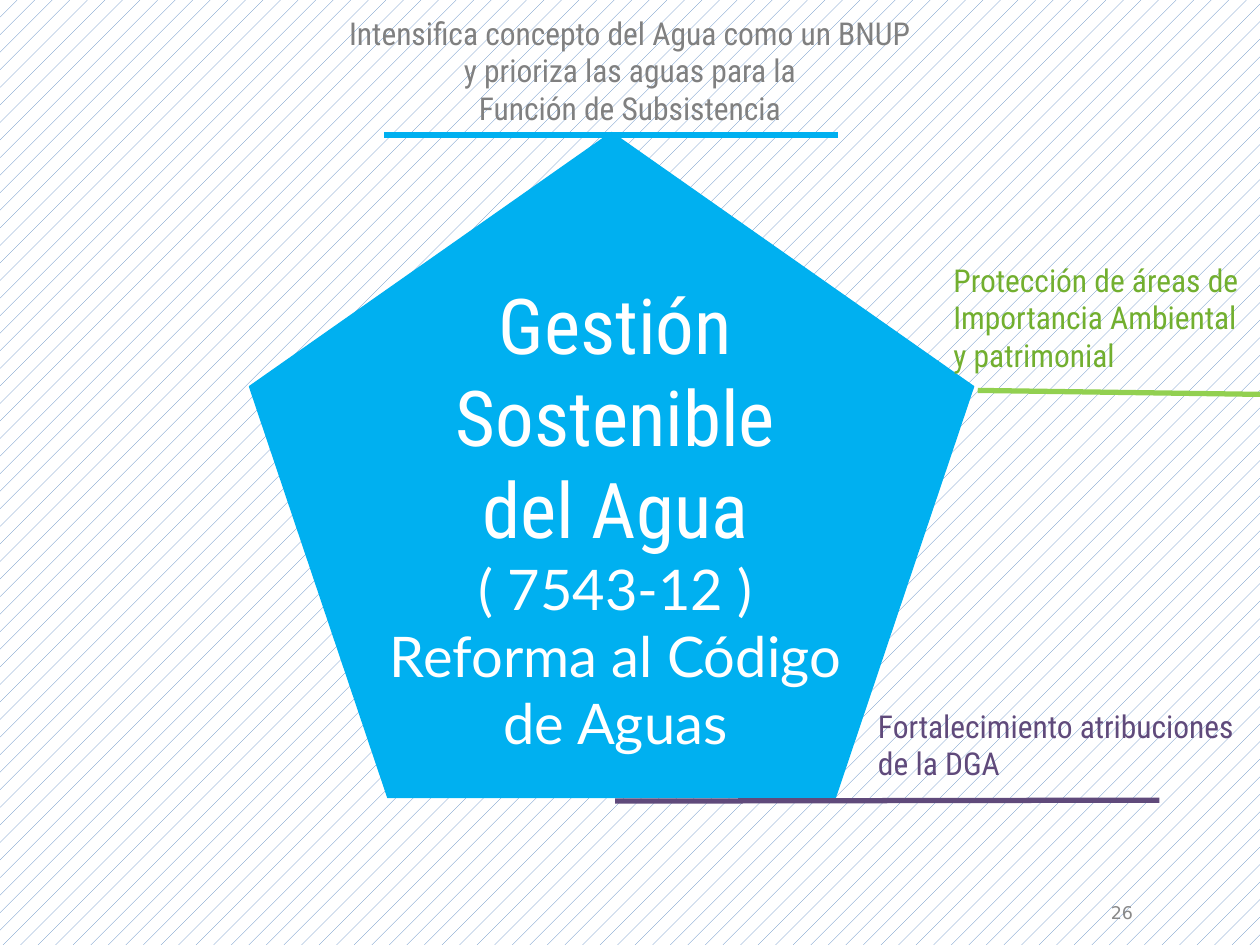
from dataclasses import dataclass

import pptx
import pptx.dml.color
import pptx.enum.dml
import pptx.enum.shapes
import pptx.enum.text
import pptx.oxml.ns
import pptx.util
from lxml import etree
from pptx.util import Cm

ALIGN = pptx.enum.text.PP_ALIGN
ANCHOR = pptx.enum.text.MSO_ANCHOR


@dataclass(frozen=True)
class Theme:
    water: str = "00B0F0"
    pattern: str = "4F81BD"
    white: str = "FFFFFF"
    gray: str = "808080"
    number: str = "898989"
    green: str = "72AF2F"
    green_line: str = "92D050"
    purple: str = "604A7B"
    heading_font: str = "Roboto Condensed"
    detail_font: str = "Lato"
    number_font: str = "DejaVu Sans"
    heading_size: int = 44
    detail_size: int = 32
    label_size: int = 18
    number_size: int = 10
    rule_width: int = 3


@dataclass(frozen=True)
class Line:
    text: str
    font: str
    size: int
    color: str
    align: ALIGN = ALIGN.LEFT


@dataclass(frozen=True)
class Label:
    """A short text and the rule beneath it; lengths in centimetres."""
    lines: tuple[str, ...]
    box: tuple[float, float, float, float]
    color: str
    align: ALIGN
    start: tuple[float, float]
    end: tuple[float, float]
    rule_color: str


THEME = Theme()

LABELS = (
    Label(("Intensifica concepto del Agua como un BNUP",
           "y prioriza las aguas para la", "Función de Subsistencia"),
          (6.35, 0.15, 12.7, 2.57), THEME.gray, ALIGN.CENTER,
          (16.89, 2.72), (7.75, 2.72), THEME.water),
    Label(("Protección de áreas de", "Importancia Ambiental", "y patrimonial"),
          (18.97, 5.13, 6.81, 3.43), THEME.green, ALIGN.LEFT,
          (25.4, 7.95), (19.71, 7.87), THEME.green_line),
    Label(("Fortalecimiento atribuciones", "de la DGA"),
          (17.45, 14.12, 8.66, 1.8), THEME.purple, ALIGN.LEFT,
          (23.37, 16.13), (12.4, 16.15), THEME.purple),
)


def rgb(value: str) -> pptx.dml.color.RGBColor:
    return pptx.dml.color.RGBColor.from_string(value)


def write(tf, lines: list[Line], wrap: bool = True, anchor: ANCHOR = ANCHOR.TOP) -> None:
    tf.word_wrap = wrap
    tf.auto_size = pptx.enum.text.MSO_AUTO_SIZE.NONE
    tf.vertical_anchor = anchor
    for i, line in enumerate(lines):
        p = tf.paragraphs[0] if i == 0 else tf.add_paragraph()
        p.text = line.text
        p.alignment = line.align
        p.font.name = line.font
        p.font.size = pptx.util.Pt(line.size)
        p.font.color.rgb = rgb(line.color)


def add_text(s, box: tuple[float, ...], lines: list[Line], anchor: ANCHOR = ANCHOR.TOP) -> None:
    sp = s.shapes.add_textbox(*map(Cm, box))
    write(sp.text_frame, lines, anchor=anchor)


def add_label(s, label: Label) -> None:
    rule = s.shapes.add_connector(pptx.enum.shapes.MSO_CONNECTOR.STRAIGHT,
                                  *map(Cm, label.start + label.end))
    rule.line.color.rgb = rgb(label.rule_color)
    rule.line.width = pptx.util.Pt(THEME.rule_width)
    etree.SubElement(rule._element.spPr, pptx.oxml.ns.qn("a:effectLst"))
    add_text(s, label.box, [Line(text, THEME.heading_font, THEME.label_size,
                                 label.color, label.align) for text in label.lines])


def add_pentagon(s) -> None:
    sp = s.shapes.add_shape(pptx.enum.shapes.MSO_SHAPE.REGULAR_PENTAGON,
                            Cm(5.03), Cm(2.67), Cm(14.6), Cm(13.41))
    sp.shadow.inherit = False
    sp.fill.solid()
    sp.fill.fore_color.rgb = rgb(THEME.water)
    sp.line.color.rgb = rgb(THEME.water)
    sp.line.width = pptx.util.Pt(0.75)


def place_title(s) -> None:
    title = s.shapes.title
    title.left, title.top, title.width, title.height = map(Cm, (7.52, 5.46, 9.78, 11.38))
    heading = [Line(text, THEME.heading_font, THEME.heading_size, THEME.white, ALIGN.CENTER)
               for text in ("Gestión", "Sostenible", "del Agua")]
    detail = [Line(text, THEME.detail_font, THEME.detail_size, THEME.white, ALIGN.CENTER)
              for text in ("( 7543-12 )", "Reforma al Código", "de Aguas")]
    write(title.text_frame, heading + detail, wrap=False)
    # Bring the title in front of the pentagon
    s.shapes._spTree.append(title._element)


def main() -> None:
    prs = pptx.Presentation()
    prs.slide_width, prs.slide_height = Cm(25.4), Cm(19.05)
    s = prs.slides.add_slide(prs.slide_layouts[5])

    # Patterned background
    fill = s.background.fill
    fill.patterned()
    fill.pattern = pptx.enum.dml.MSO_PATTERN.PERCENT_5
    fill.fore_color.rgb = rgb(THEME.pattern)
    fill.back_color.rgb = rgb(THEME.white)

    # Slide number
    add_text(s, (17.17, 18.14, 5.92, 0.53),
             [Line("26", THEME.number_font, THEME.number_size, THEME.number, ALIGN.RIGHT)],
             ANCHOR.MIDDLE)

    # Central pentagon with its surrounding labels
    add_pentagon(s)
    for label in LABELS:
        add_label(s, label)
    place_title(s)

    prs.save("out.pptx")


if __name__ == "__main__":
    main()
